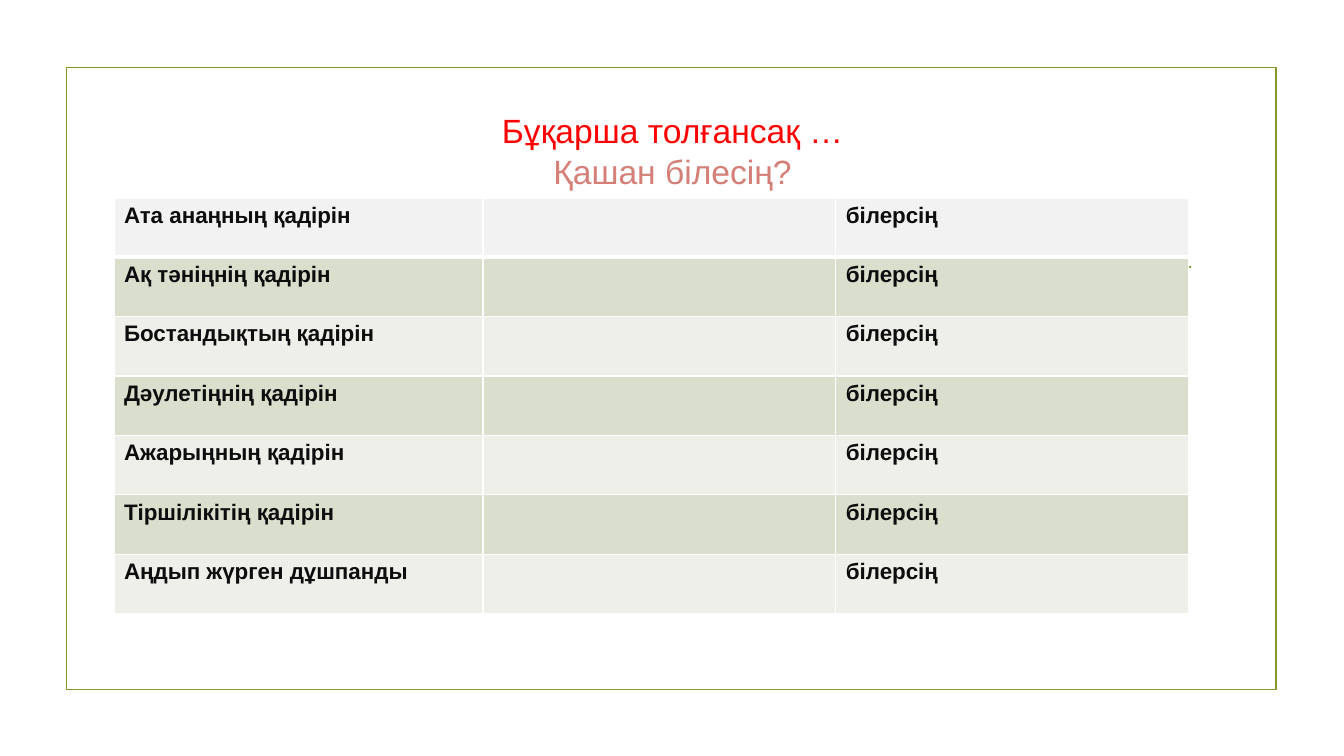
import lxml.etree
import pptx
import pptx.dml.color
import pptx.enum.shapes
import pptx.enum.text
import pptx.oxml.ns
import pptx.util
from pptx.util import Inches

COLORS = {
    "olive": "83992A",
    "red": "FF0000",
    "rose": "D47F77",
    "text": "0D0D0D",
    "white": "FFFFFF",
    "header": "F2F2F2",
    "dark band": "D9DECD",
    "light band": "EDEFE8",
}
qn = pptx.oxml.ns.qn


def color(name):
    return pptx.dml.color.RGBColor.from_string(COLORS[name])


def format_run(run, color_name, **values):
    run.font.color.rgb = color(color_name)
    for name, value in {"name": "Arial", **values}.items():
        setattr(run.font, name, value)


presentation = pptx.Presentation()
presentation.slide_width = Inches(13.33)
presentation.slide_height = Inches(7.5)
slide = presentation.slides.add_slide(presentation.slide_layouts[6])

# Frame
frame = slide.shapes.add_shape(
    pptx.enum.shapes.MSO_SHAPE.RECTANGLE,
    Inches(0.66), Inches(0.67), Inches(12), Inches(6.17))
frame.shadow.inherit = False
frame.fill.background()

# Rule behind the table
rule = slide.shapes.add_connector(
    pptx.enum.shapes.MSO_CONNECTOR.STRAIGHT,
    Inches(1.53), Inches(2.65), Inches(11.81), Inches(2.65))
lxml.etree.SubElement(rule._element.spPr, qn("a:effectLst"))

for shape in (frame, rule):
    shape.line.color.rgb = color("olive")
    shape.line.width = pptx.util.Pt(1.25)

# Title: placed so that both lines end above the table
title = slide.shapes.add_textbox(Inches(1.42), Inches(0.78), Inches(10.5), Inches(1.43))
title.text_frame.word_wrap = True
title.text_frame.vertical_anchor = pptx.enum.text.MSO_ANCHOR.MIDDLE
paragraph = title.text_frame.paragraphs[0]
paragraph.alignment = pptx.enum.text.PP_ALIGN.CENTER
for index, (text, color_name) in enumerate(
        [("Бұқарша толғансақ …", "red"), ("Қашан білесің?", "rose")]):
    if index:
        paragraph.add_line_break()
    run = paragraph.add_run()
    run.text = text
    format_run(run, color_name, size=pptx.util.Pt(24))

# Table: the middle column is left empty for answers
subjects = [
    "Ата анаңның қадірін",
    "Ақ тәніңнің қадірін",
    "Бостандықтың қадірін",
    "Дәулетіңнің қадірін",
    "Ажарыңның қадірін",
    "Тіршілікітің қадірін",
    "Аңдып жүрген дұшпанды",
]
table = slide.shapes.add_table(
    len(subjects), 3, Inches(1.13), Inches(1.97), Inches(10.66), Inches(4.12)).table
table.first_row = False
table.horz_banding = False
for column, width in zip(table.columns, (3.66, 3.5, 3.5)):
    column.width = Inches(width)

for row_index, subject in enumerate(subjects):
    table.rows[row_index].height = Inches(0.59 if row_index else 0.58)
    if row_index == 0:
        fill_name = "header"
    else:
        fill_name = "dark band" if row_index % 2 else "light band"
    for column_index, text in enumerate((subject, "", "білерсің")):
        cell = table.cell(row_index, column_index)

        # Borders: white, thicker between the first two rows
        properties = cell._tc.get_or_add_tcPr()
        for side in ("L", "R", "T", "B"):
            thick = (row_index, side) in ((0, "B"), (1, "T"))
            border = lxml.etree.SubElement(
                properties, qn("a:ln" + side), w=str(pptx.util.Pt(3 if thick else 1)))
            border_fill = lxml.etree.SubElement(border, qn("a:solidFill"))
            lxml.etree.SubElement(border_fill, qn("a:srgbClr"), val=COLORS["white"])

        cell.fill.solid()
        cell.fill.fore_color.rgb = color(fill_name)
        if text:
            run = cell.text_frame.paragraphs[0].add_run()
            run.text = text
            format_run(run, "text", size=pptx.util.Pt(16), bold=True)

presentation.save("out.pptx")
